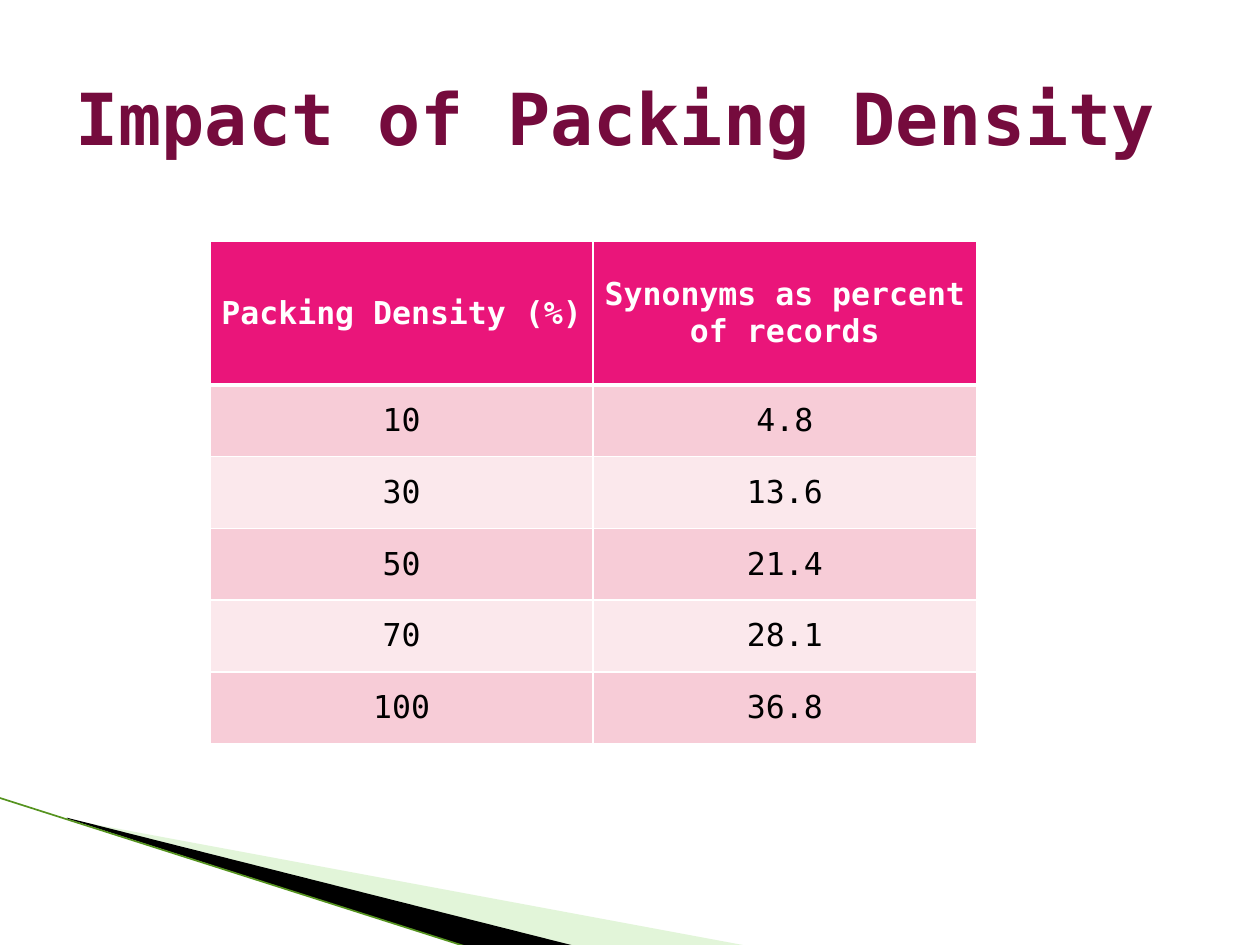
import pptx
import pptx.dml.color
import pptx.enum.shapes
import pptx.enum.text
import pptx.oxml
import pptx.oxml.ns
import pptx.util
from lxml import etree

Pt = pptx.util.Pt
qn = pptx.oxml.ns.qn
FONT = "DejaVu Sans Mono"
COLORS = {
    "title": "750B3D",
    "header": "EA157A",
    "band_dark": "F7CCD7",
    "band_light": "FBE8EC",
    "white": "FFFFFF",
    "black": "000000",
    "pale_green": "B8E7A1",
    "edge_green": "55931F",
}
ROWS = [
    ("Packing Density (%)", "Synonyms as percent of records"),
    ("10", "4.8"),
    ("30", "13.6"),
    ("50", "21.4"),
    ("70", "28.1"),
    ("100", "36.8"),
]


def rgb(name):
    return pptx.dml.color.RGBColor.from_string(COLORS[name])


def style_text(tf, size, color, bold):
    font = tf.paragraphs[0].runs[0].font
    font.name = FONT
    font.size = Pt(size)
    font.bold = bold
    font.color.rgb = rgb(color)


def add_wedge(s, points, color, alpha=None):
    start, *rest = [(Pt(x), Pt(y)) for x, y in points]
    builder = s.shapes.build_freeform(*start)
    builder.add_line_segments(rest, close=True)
    sp = builder.convert_to_shape()
    sp.shadow.inherit = False
    sp.fill.solid()
    sp.fill.fore_color.rgb = rgb(color)
    sp.line.fill.background()
    if alpha is not None:
        clr = sp.fill._xPr.find(qn("a:solidFill"))[0]
        etree.SubElement(clr, qn("a:alpha"), val=str(alpha * 1000))


def add_edge(s, start, end, color, width):
    line = s.shapes.add_connector(
        pptx.enum.shapes.MSO_CONNECTOR.STRAIGHT, *map(Pt, start + end))
    line.line.color.rgb = rgb(color)
    line.line.width = Pt(width)
    etree.SubElement(line._element.spPr, qn("a:effectLst"))


def add_title(s, text):
    sp = s.shapes.add_textbox(Pt(36), Pt(21.6), Pt(648), Pt(90))
    tf = sp.text_frame
    tf.word_wrap = True
    tf.vertical_anchor = pptx.enum.text.MSO_ANCHOR.MIDDLE
    tf.text = text
    style_text(tf, 41, "title", True)


def set_borders(cell, bottom):
    tc_pr = cell._tc.get_or_add_tcPr()
    widths = {"lnL": 1, "lnR": 1, "lnT": 1, "lnB": bottom}
    for i, (side, width) in enumerate(widths.items()):
        ln = etree.Element(qn(f"a:{side}"), w=str(Pt(width)))
        fill = etree.SubElement(ln, qn("a:solidFill"))
        etree.SubElement(fill, qn("a:srgbClr"), val=COLORS["white"])
        tc_pr.insert(i, ln)


def style_cell(cell, text, row):
    header = row == 0
    band = "band_dark" if row % 2 else "band_light"
    cell.fill.solid()
    cell.fill.fore_color.rgb = rgb("header" if header else band)
    cell.margin_left = cell.margin_right = 0
    cell.margin_top = cell.margin_bottom = 0
    cell.vertical_anchor = pptx.enum.text.MSO_ANCHOR.MIDDLE
    tf = cell.text_frame
    tf.text = text
    tf.paragraphs[0].alignment = pptx.enum.text.PP_ALIGN.CENTER
    style_text(tf, 18, "white" if header else "black", header)
    set_borders(cell, 3 if header else 1)


def add_density_table(s):
    table = s.shapes.add_table(
        len(ROWS), 2, Pt(120), Pt(138), Pt(438), Pt(287)).table
    for col in table.columns:
        col.width = Pt(219)
    for i, values in enumerate(ROWS):
        table.rows[i].height = Pt(41 if i else 82)
        for j, text in enumerate(values):
            style_cell(table.cell(i, j), text, i)
    # The header's thick lower edge is shared with the first data row
    for cell in table.rows[1].cells:
        cell._tc.tcPr.find(qn("a:lnT")).set("w", str(Pt(3)))


def main():
    prs = pptx.Presentation()
    prs.slide_width, prs.slide_height = Pt(720), Pt(540)
    s = prs.slides.add_slide(prs.slide_layouts[6])

    # Corner decoration
    add_wedge(s, [(39.6, 468.4), (428.4, 540.7), (328.3, 540.7), (39.6, 468)],
              "pale_green", 40)
    add_wedge(s, [(38.2, 467.3), (329, 540.7), (267.8, 541.4), (38.9, 468)],
              "black")
    add_edge(s, (-0.7, 455.8), (267.8, 541.4), "edge_green", 0.95)

    # Title and table
    add_title(s, "Impact of Packing Density")
    add_density_table(s)

    prs.save("out.pptx")


if __name__ == "__main__":
    main()
